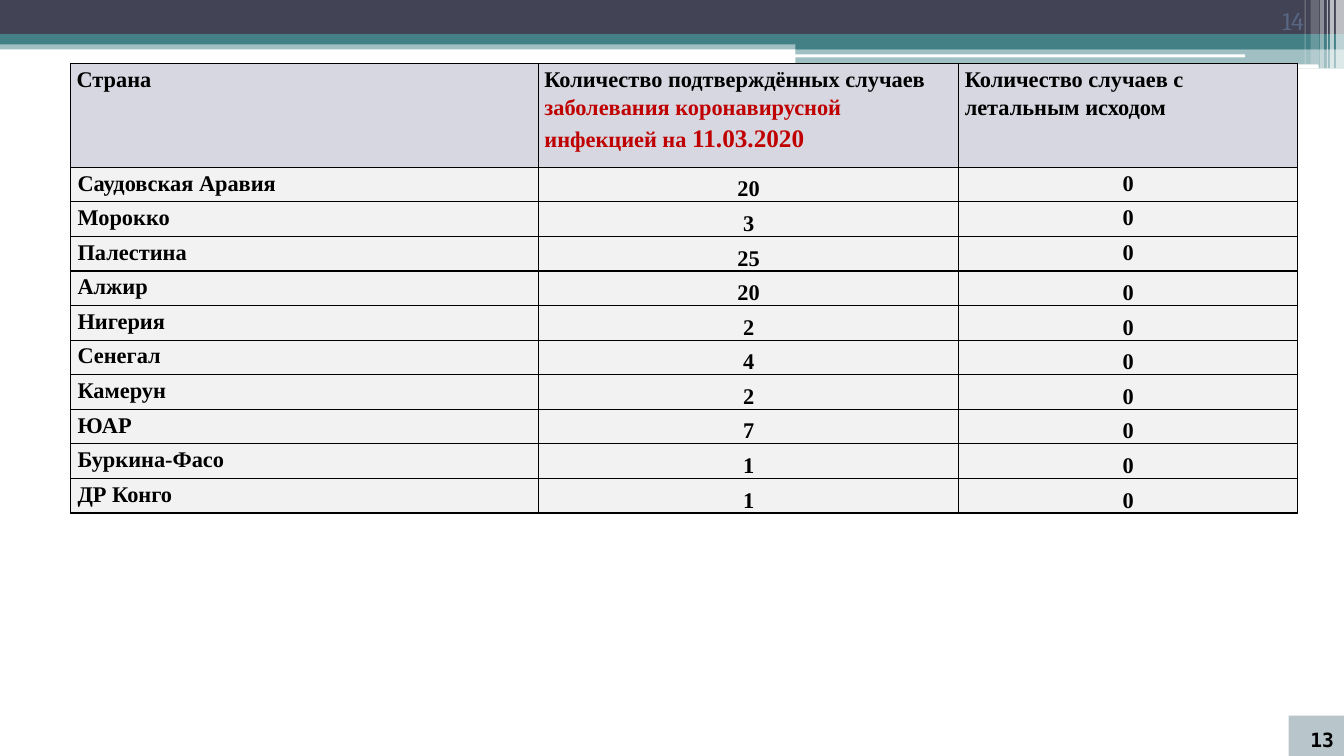
from lxml.etree import SubElement
from pptx import Presentation
from pptx.dml.color import RGBColor
from pptx.enum.shapes import MSO_SHAPE as Preset
from pptx.enum.text import MSO_ANCHOR as Anchor, PP_ALIGN as Align
from pptx.oxml.ns import qn
from pptx.util import Inches, Pt

WHITE = RGBColor(0xFF, 0xFF, 0xFF)
BLACK = RGBColor(0x00, 0x00, 0x00)
SLATE = RGBColor(0x42, 0x44, 0x56)
TEAL = RGBColor(0x43, 0x80, 0x86)
GRAY_BLUE = RGBColor(0x9B, 0xAF, 0xB5)
NUMBER_BLUE = RGBColor(0x59, 0x67, 0x84)
RED = RGBColor(0xC0, 0x00, 0x00)
HEADER_FILL = RGBColor(0xD6, 0xD7, 0xE0)
BODY_FILL = RGBColor(0xF2, 0xF2, 0xF2)

# left, top, width, height, colour, opacity in percent
BANDS = [
    (0, 0.4, 13.33, 0.09, TEAL, 50),
    (0, 0, 13.33, 0.34, SLATE, 100),
    (0, 0.34, 13.33, 0.1, TEAL, 100),
    (7.89, 0.39, 5.44, 0.1, TEAL, 100),
    (7.89, 0.48, 5.44, 0.2, TEAL, 50),
]
ROUNDED_BARS = [
    (7.88, 0.54, 4.47, 0.03, WHITE, 100),
    (10.75, 0.64, 2.33, 0.04, WHITE, 100),
]
STRIPES = [
    (13.25, 0, 0.08, 0.68, WHITE, 65),
    (13.19, 0, 0.04, 0.68, WHITE, 65),
    (13.16, 0, 0.01, 0.68, WHITE, 60),
    (13.09, 0, 0.04, 0.68, WHITE, 40),
    (13, 0, 0.08, 0.64, WHITE, 20),
    (12.94, 0, 0.01, 0.64, WHITE, 30),
]

# Each header is a list of runs: text, size, colour
HEADERS = [
    [("Страна", 16, BLACK)],
    [
        ("Количество подтверждённых случаев ", 16, BLACK),
        ("заболевания коронавирусной инфекцией на ", 16, RED),
        ("11.03.2020", 18, RED),
    ],
    [("Количество случаев с летальным исходом", 16, BLACK)],
]
COUNTRIES = [
    ("Саудовская Аравия", 20, 0),
    ("Морокко", 3, 0),
    ("Палестина", 25, 0),
    ("Алжир", 20, 0),
    ("Нигерия", 2, 0),
    ("Сенегал", 4, 0),
    ("Камерун", 2, 0),
    ("ЮАР", 7, 0),
    ("Буркина-Фасо", 1, 0),
    ("ДР Конго", 1, 0),
]
TOP_ANCHORED_DEATHS = 3
COLUMN_WIDTHS = [4.64, 4.17, 3.36]
TABLE_HEIGHT = 4.46
HEADER_HEIGHT = 1.03


def add_bar(slide, left, top, width, height, color, opacity, preset=Preset.RECTANGLE):
    bar = slide.shapes.add_shape(
        preset, Inches(left), Inches(top), Inches(width), Inches(height))
    bar.shadow.inherit = False
    bar.line.fill.background()
    bar.fill.solid()
    bar.fill.fore_color.rgb = color
    if opacity < 100:
        color_node = bar.fill._xPr.find(qn("a:solidFill"))[0]
        SubElement(color_node, qn("a:alpha"), val=str(opacity * 1000))
    return bar


def add_span(para, text, size, color, font="Times New Roman", bold=True):
    span = para.add_run()
    span.text = text
    span.font.name = font
    span.font.size = Pt(size)
    span.font.bold = bold
    span.font.color.rgb = color


def write_number(box, text, size, color, font, bold):
    frame = box.text_frame
    frame.word_wrap = True
    frame.vertical_anchor = Anchor.BOTTOM
    para = frame.paragraphs[0]
    para.alignment = Align.RIGHT
    add_span(para, text, size, color, font, bold)


def add_borders(cell):
    properties = cell._tc.get_or_add_tcPr()
    for side in ("lnL", "lnR", "lnT", "lnB"):
        line = SubElement(properties, qn(f"a:{side}"), w=str(Pt(1)))
        fill = SubElement(line, qn("a:solidFill"))
        SubElement(fill, qn("a:srgbClr"), val=str(BLACK))


def fill_cell(cell, runs, color, margin, align=Align.LEFT, anchor=Anchor.TOP):
    add_borders(cell)
    cell.fill.solid()
    cell.fill.fore_color.rgb = color
    cell.margin_left = cell.margin_right = Inches(margin)
    cell.margin_top = cell.margin_bottom = 0
    cell.vertical_anchor = anchor
    para = cell.text_frame.paragraphs[0]
    para.alignment = align
    para.line_spacing = 1.15
    for text, size, span_color in runs:
        add_span(para, text, size, span_color)


def add_case_table(slide):
    table = slide.shapes.add_table(
        len(COUNTRIES) + 1, len(COLUMN_WIDTHS), Inches(0.7), Inches(0.63),
        Inches(sum(COLUMN_WIDTHS)), Inches(TABLE_HEIGHT)).table
    table.horz_banding = False
    for column, width in zip(table.columns, COLUMN_WIDTHS):
        column.width = Inches(width)
    for row in table.rows:
        row.height = Inches((TABLE_HEIGHT - HEADER_HEIGHT) / len(COUNTRIES))
    table.rows[0].height = Inches(HEADER_HEIGHT)

    for column, runs in enumerate(HEADERS):
        fill_cell(table.cell(0, column), runs, HEADER_FILL, 0.06)
    for row, values in enumerate(COUNTRIES, start=1):
        deaths_anchor = Anchor.TOP if row <= TOP_ANCHORED_DEATHS else Anchor.BOTTOM
        anchors = (Anchor.TOP, Anchor.BOTTOM, deaths_anchor)
        for column, (value, anchor) in enumerate(zip(values, anchors)):
            align = Align.CENTER if column else Align.LEFT
            fill_cell(table.cell(row, column), [(str(value), 16, BLACK)],
                      BODY_FILL, 0.07, align, anchor)


def main():
    deck = Presentation()
    deck.slide_width, deck.slide_height = Inches(13.33), Inches(7.5)
    slide = deck.slides.add_slide(deck.slide_layouts[6])

    for band in BANDS:
        add_bar(slide, *band)
    for rounded_bar in ROUNDED_BARS:
        add_bar(slide, *rounded_bar, preset=Preset.ROUNDED_RECTANGLE)
    for stripe in STRIPES:
        add_bar(slide, *stripe)

    top_number = slide.shapes.add_textbox(
        Inches(11.92), Inches(0), Inches(1.11), Inches(0.4))
    write_number(top_number, "14", 18, NUMBER_BLUE, "Cambria", False)
    add_case_table(slide)
    corner = add_bar(slide, 12.78, 7.1, 0.55, 0.4, GRAY_BLUE, 70)
    write_number(corner, "13", 14, BLACK, "DejaVu Sans Mono", True)

    deck.save("out.pptx")


if __name__ == "__main__":
    main()
